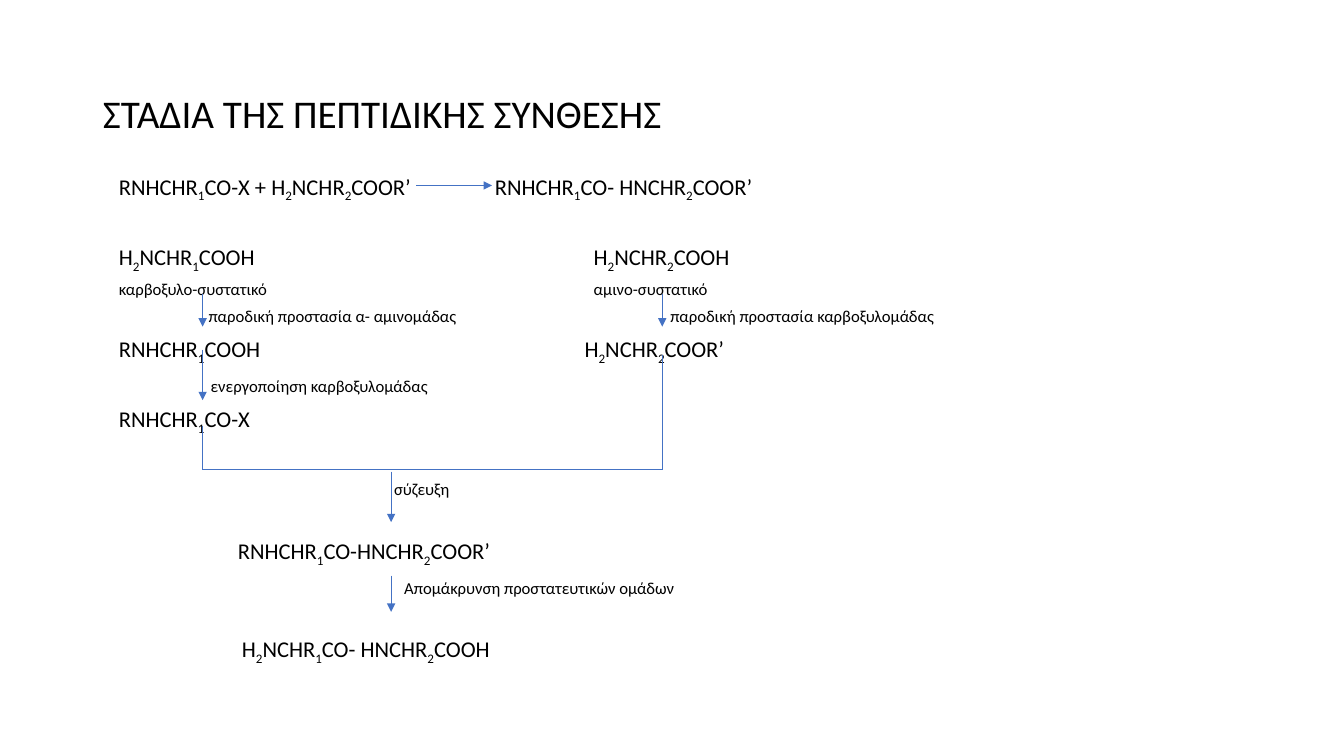
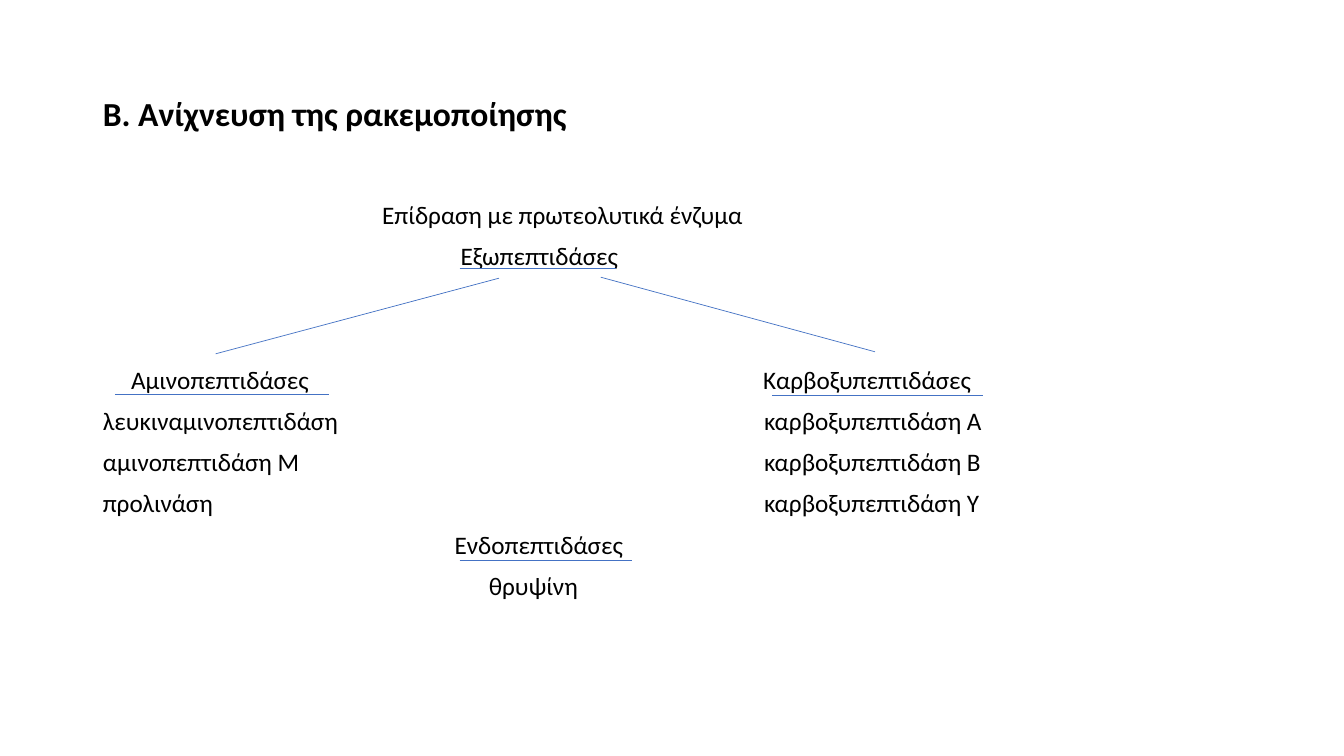
from itertools import groupby

from lxml.etree import SubElement
from pptx import Presentation
from pptx.dml.color import RGBColor
from pptx.enum.shapes import MSO_CONNECTOR
from pptx.oxml.ns import qn
from pptx.util import Inches, Pt

# Grid: square cells of a tenth of an inch, counted from the top left corner.
CELL = Inches(0.1)
COLUMNS, ROWS = 133.33, 75
RIGHT_MARGIN = 124
TITLE_COLUMN, TITLE_ROW = 10.2, 11.25

COLORS = {"text": "000000", "line": "4472C4"}
FONT = "Calibri"
LINE_HEIGHT = 1.22
FORMULA_SIZE, NOTE_SIZE, ENZYME_SIZE = 16.1, 11.9, 18


def cells(count):
    return round(count * CELL)


def add_runs(paragraph, text, subscript_digits):
    if not subscript_digits:
        paragraph.add_run().text = text
        return
    for is_digit, characters in groupby(text, str.isdigit):
        run = paragraph.add_run()
        run.text = "".join(characters)
        if is_digit:
            run._r.get_or_add_rPr().set("baseline", "-25000")


def add_text(slide, column, row, lines, size, bold=False, subscript_digits=False):
    """Write lines from a column on, the first one centred on a row."""
    line_height = Pt(size * LINE_HEIGHT)
    box = slide.shapes.add_textbox(
        cells(column), cells(row) - line_height // 2,
        cells(RIGHT_MARGIN - column), line_height * len(lines))
    frame = box.text_frame
    frame.word_wrap = True
    frame.margin_left = frame.margin_right = frame.margin_top = frame.margin_bottom = 0
    for index, line in enumerate(lines):
        paragraph = frame.add_paragraph() if index else frame.paragraphs[0]
        if index:
            paragraph.space_before = Pt(7.6)
        paragraph.font.name = FONT
        paragraph.font.size = Pt(size)
        paragraph.font.bold = bold
        paragraph.font.color.rgb = RGBColor.from_string(COLORS["text"])
        add_runs(paragraph, line, subscript_digits)


def add_formula(slide, column, row, formula):
    add_text(slide, column, row, [formula], FORMULA_SIZE, subscript_digits=True)


def add_note(slide, column, row, note):
    add_text(slide, column, row, [note], NOTE_SIZE)


def add_line(slide, start, end, arrow=False):
    connector = slide.shapes.add_connector(
        MSO_CONNECTOR.STRAIGHT, *map(cells, (*start, *end)))
    connector.line.color.rgb = RGBColor.from_string(COLORS["line"])
    connector.line.width = Pt(0.5)
    if arrow:
        SubElement(connector.line._get_or_add_ln(), qn("a:tailEnd"), type="triangle")
    SubElement(connector._element.spPr, qn("a:effectLst"))


def add_titled_slide(presentation, title, size, bold=False):
    slide = presentation.slides.add_slide(presentation.slide_layouts[6])
    add_text(slide, TITLE_COLUMN, TITLE_ROW, [title], size, bold)
    return slide


def add_synthesis_slide(presentation):
    slide = add_titled_slide(presentation, "ΣΤΑΔΙΑ ΤΗΣ ΠΕΠΤΙΔΙΚΗΣ ΣΥΝΘΕΣΗΣ", 28)
    carboxyl, amino = 11.8, 58.9
    carboxyl_arrow, amino_arrow, coupling_arrow = 20.1, 65.7, 38.8
    reaction_row, acid_row, component_row, protection_row = 18.5, 25.5, 28.65, 31.4
    protected_row, activation_row, activated_row = 34.6, 38.25, 41.55
    junction_row = 46.6

    for column, row, formula in (
        (carboxyl, reaction_row, "RNHCHR1CO-X + H2NCHR2COOR’"),
        (49.1, reaction_row, "RNHCHR1CO- HNCHR2COOR’"),
        (carboxyl, acid_row, "Η2NCHR1COΟΗ"),
        (amino, acid_row, "H2NCHR2COOΗ"),
        (carboxyl, protected_row, "RNHCHR1COOH"),
        (58, protected_row, "H2NCHR2COOR’"),
        (carboxyl, activated_row, "RNHCHR1CO-X"),
        (23.6, 54.65, "RNHCHR1CO-HNCHR2COOR’"),
        (24, 64.35, "H2NCHR1CO- HNCHR2COOH"),
    ):
        add_formula(slide, column, row, formula)

    for column, row, note in (
        (carboxyl, component_row, "καρβοξυλο-συστατικό"),
        (amino, component_row, "αμινο-συστατικό"),
        (20.7, protection_row, "παροδική προστασία α- αμινομάδας"),
        (66.5, protection_row, "παροδική προστασία καρβοξυλομάδας"),
        (20.9, activation_row, "ενεργοποίηση καρβοξυλομάδας"),
        (39.1, 48.5, "σύζευξη"),
        (40.1, 58.3, "Απομάκρυνση προστατευτικών ομάδων"),
    ):
        add_note(slide, column, row, note)

    add_line(slide, (41.3, 18.4), (48.8, 18.4), arrow=True)
    for column, top, bottom in (
        (carboxyl_arrow, 29.2, 32.4),
        (amino_arrow, 29.2, 32.4),
        (carboxyl_arrow, 34.7, 39.7),
        (coupling_arrow, 46.8, 51.8),
        (coupling_arrow, 57.1, 60.7),
    ):
        add_line(slide, (column, top), (column, bottom), arrow=True)
    for column, top in ((carboxyl_arrow, 42.3), (amino_arrow, 35.2)):
        add_line(slide, (column, top), (column, junction_row))
    add_line(slide, (carboxyl_arrow, junction_row), (amino_arrow, junction_row))


def enzyme_row(number):
    return 21.3 + 4.09 * number


def add_racemization_slide(presentation):
    slide = add_titled_slide(presentation, "B. Ανίχνευση της ρακεμοποίησης", 24, bold=True)
    for column, number, lines in (
        (37.9, 0, ["Eπίδραση με πρωτεολυτικά ένζυμα"]),
        (45.7, 1, ["Εξωπεπτιδάσες"]),
        (13, 4, ["Αμινοπεπτιδάσες"]),
        (75.7, 4, ["Καρβοξυπεπτιδάσες"]),
        (TITLE_COLUMN, 5, ["λευκιναμινοπεπτιδάση", "αμινοπεπτιδάση Μ", "προλινάση"]),
        (75.8, 5, [f"καρβοξυπεπτιδάση {letter}" for letter in "ΑΒΥ"]),
        (45.1, 8, ["Ενδοπεπτιδάσες"]),
        (48.5, 9, ["θρυψίνη"]),
    ):
        add_text(slide, column, enzyme_row(number), lines, ENZYME_SIZE)

    for left, right, row in (
        (45.6, 61.1, 26.6),
        (11.4, 32.6, 39.1),
        (76.6, 97.5, 39.2),
        (45.6, 62.7, 55.6),
    ):
        add_line(slide, (left, row), (right, row))
    add_line(slide, (49.5, 27.6), (21.4, 35.1))
    add_line(slide, (59.6, 27.5), (86.8, 34.9))


def main():
    presentation = Presentation()
    presentation.slide_width = cells(COLUMNS)
    presentation.slide_height = cells(ROWS)
    add_synthesis_slide(presentation)
    add_racemization_slide(presentation)
    presentation.save("out.pptx")


if __name__ == "__main__":
    main()
